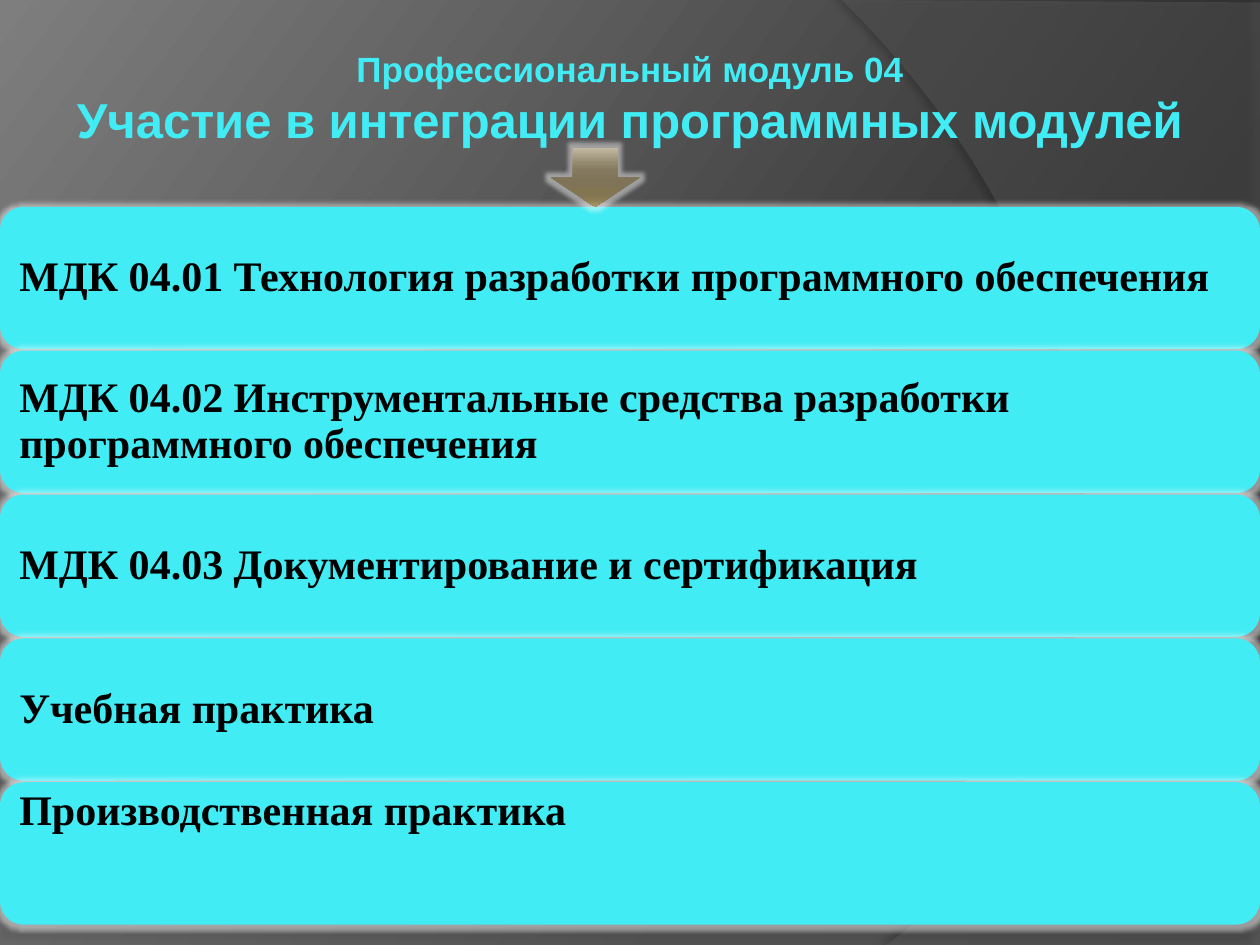
from lxml import etree
from pptx import Presentation, util as u
from pptx.dml.color import RGBColor
from pptx.enum import shapes, text
from pptx.oxml import ns

CYAN = RGBColor(0x42, 0xEC, 0xF4)
BLACK = RGBColor(0, 0, 0)
WHITE = RGBColor(0xFF, 0xFF, 0xFF)
WAVE_GREY = RGBColor(0x7F, 0x7F, 0x7F)
ARC_GREY = RGBColor(0x5E, 0x5E, 0x5E)
BACKDROP = [(0, RGBColor(0x28, 0x28, 0x28)), (30, RGBColor(0x2F, 0x2F, 0x2F)),
            (100, RGBColor(0x7E, 0x7E, 0x7E))]
BRONZE = [(0, RGBColor(0xC4, 0xBA, 0xA3)), (25, RGBColor(0x95, 0x8B, 0x71)),
          (38, RGBColor(0x85, 0x7A, 0x60)), (55, RGBColor(0x7F, 0x74, 0x57)),
          (80, RGBColor(0x82, 0x75, 0x52)), (88, RGBColor(0x8C, 0x7C, 0x54)),
          (100, RGBColor(0xAA, 0x98, 0x68))]
WIDTH, HEIGHT = 25.4, 19.05
CARD_TOP, CARD_PITCH, CARD_HEIGHT = 4.17, 2.9, 2.87
TOPICS = [
    "МДК 04.01 Технология разработки программного обеспечения",
    "МДК 04.02 Инструментальные средства разработки программного обеспечения",
    "МДК 04.03 Документирование и сертификация",
    "Учебная практика",
    "Производственная практика",
]


def bezier(start, first, second, end, steps=40):
    points = []
    for step in range(steps + 1):
        t = step / steps
        weights = ((1 - t) ** 3, 3 * t * (1 - t) ** 2, 3 * t ** 2 * (1 - t), t ** 3)
        corners = (start, first, second, end)
        points.append(tuple(sum(w * c[axis] for w, c in zip(weights, corners))
                            for axis in (0, 1)))
    return points


def add_colour(parent, colour, alpha=100):
    tint = etree.SubElement(parent, ns.qn("a:srgbClr"), val=str(colour))
    if alpha < 100:
        etree.SubElement(tint, ns.qn("a:alpha"), val=str(alpha * 1000))


def set_gradient(fill, owner, stops, angle):
    fill.gradient()
    fill.gradient_angle = angle
    stop_list = owner.xpath(".//a:gsLst")[0]
    for old in list(stop_list):
        stop_list.remove(old)
    for position, colour in stops:
        add_colour(etree.SubElement(stop_list, ns.qn("a:gs"), pos=str(position * 1000)), colour)


class ModuleSlide:
    heading = {"name": "Arial", "bold": True}
    topic = {"name": "Times New Roman", "bold": True, "size": u.Pt(24)}

    def __init__(self, deck):
        self.slide = deck.slides.add_slide(deck.slide_layouts[6])
        set_gradient(self.slide.background.fill, self.slide._element, BACKDROP, 143)

    def style(self, run, colour, values):
        for key, value in values.items():
            setattr(run.font, key, value)
        run.font.color.rgb = colour

    def frame(self, holder, anchor, margins):
        frame = holder.text_frame
        sides = ("margin_left", "margin_top", "margin_right", "margin_bottom")
        settings = {"word_wrap": True, "vertical_anchor": anchor,
                    **dict(zip(sides, map(u.Cm, margins)))}
        for key, value in settings.items():
            setattr(frame, key, value)
        return frame.paragraphs[0]

    def effect(self, shape, kind, colour, alpha, **values):
        shape.line.fill.background()
        shape.shadow.inherit = False
        effects = shape._element.spPr.find(ns.qn("a:effectLst"))
        add_colour(etree.SubElement(effects, ns.qn("a:" + kind), **values), colour, alpha)

    def sweep(self, outline, colour, alpha, shadow_alpha, distance, direction):
        points = [(u.Cm(x), u.Cm(y)) for x, y in outline]
        builder = self.slide.shapes.build_freeform(*points[0])
        builder.add_line_segments(points[1:], close=True)
        shape = builder.convert_to_shape()
        shape.fill.solid()
        shape.fill.fore_color.rgb = colour
        tint = shape._element.spPr.xpath("./a:solidFill/a:srgbClr")[0]
        etree.SubElement(tint, ns.qn("a:alpha"), val=str(alpha * 1000))
        self.effect(shape, "outerShdw", BLACK, shadow_alpha, blurRad=str(u.Pt(4)),
                    dist=str(u.Pt(distance)), dir=str(direction * 60000))

    def preset(self, kind, left, top, width, height):
        shape = self.slide.shapes.add_shape(kind, *map(u.Cm, (left, top, width, height)))
        self.effect(shape, "glow", WHITE, 45, rad=str(u.Pt(5)))
        return shape

    def card(self, top, wording, anchor, inset):
        shape = self.preset(shapes.MSO_SHAPE.ROUNDED_RECTANGLE, 0, top, WIDTH, CARD_HEIGHT)
        shape.fill.solid()
        shape.fill.fore_color.rgb = CYAN
        line = self.frame(shape, anchor, (0.25, inset, 0.25, inset))
        line.alignment = text.PP_ALIGN.LEFT
        line.line_spacing = 0.9
        run = line.add_run()
        run.text = wording
        self.style(run, BLACK, self.topic)

    def title(self, lines):
        box = self.slide.shapes.add_textbox(*map(u.Cm, (0.4, 0.4, 24.6, 2.6)))
        line = self.frame(box, text.MSO_ANCHOR.BOTTOM, (0.13, 0, 0.13, 0))
        line.alignment = text.PP_ALIGN.CENTER
        for index, (wording, size) in enumerate(lines):
            if index:
                line.add_line_break()
            run = line.add_run()
            run.text = wording
            self.style(run, CYAN, {**self.heading, "size": u.Pt(size)})

    def arrow(self, left, top, width, height):
        shape = self.preset(shapes.MSO_SHAPE.DOWN_ARROW, left, top, width, height)
        set_gradient(shape.fill, shape._element, BRONZE, 270)


def main():
    deck = Presentation()
    deck.slide_width, deck.slide_height = u.Cm(WIDTH), u.Cm(HEIGHT)
    module = ModuleSlide(deck)
    wave = bezier((WIDTH, 13.21), (14.2, 18.52), (9.93, 18.26), (0, 17.91))
    module.sweep(wave + [(0, HEIGHT), (WIDTH, HEIGHT)], WAVE_GREY, 45, 35, 3.5, 270)
    arc = bezier((17.86, HEIGHT), (22.63, 15.72), (24.05, 6.99), (16.97, 0))
    module.sweep(arc + [(WIDTH, 0.05), (WIDTH, HEIGHT)], ARC_GREY, 40, 45, 4, 180)
    for index, wording in enumerate(TOPICS):
        last = index == len(TOPICS) - 1
        anchor = text.MSO_ANCHOR.TOP if last else text.MSO_ANCHOR.MIDDLE
        module.card(CARD_TOP + index * CARD_PITCH, wording, anchor, 0 if last else 0.25)
    module.title([("Профессиональный модуль 04", 20),
                  ("Участие в интеграции программных модулей", 28)])
    module.arrow(11.1, 2.98, 1.8, 1.19)
    deck.save("out.pptx")


if __name__ == "__main__":
    main()
